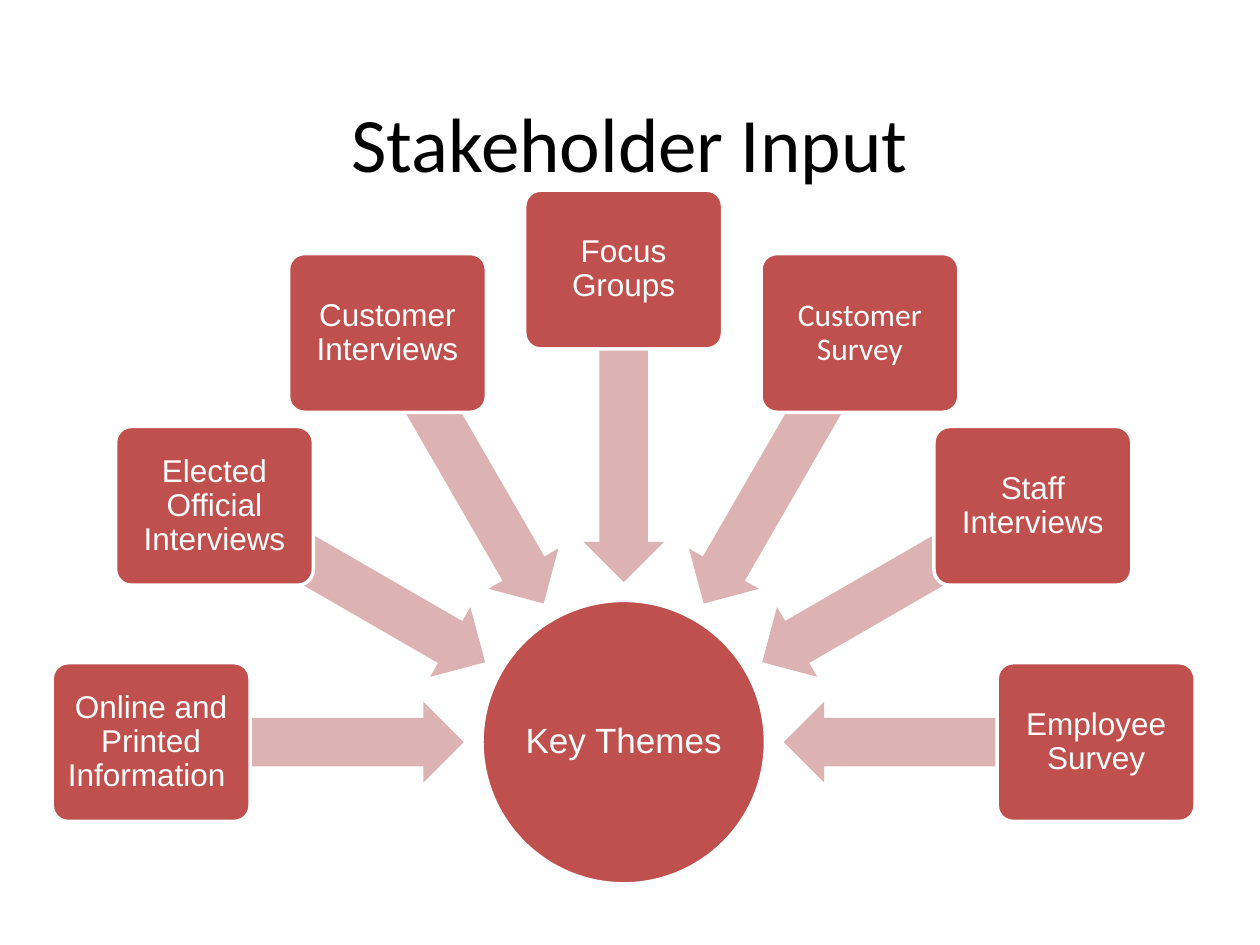
from dataclasses import dataclass
from math import cos, radians, sin

from pptx import Presentation
from pptx.dml.color import RGBColor
from pptx.enum.shapes import MSO_SHAPE
from pptx.enum.text import MSO_ANCHOR, PP_ALIGN
from pptx.util import Inches, Pt

ELLIPSE = MSO_SHAPE.OVAL
ROUNDED = MSO_SHAPE.ROUNDED_RECTANGLE
LEFT_ARROW = MSO_SHAPE.LEFT_ARROW
MIDDLE = MSO_ANCHOR.MIDDLE
CENTER = PP_ALIGN.CENTER


@dataclass(frozen=True)
class Theme:
    ink: RGBColor = RGBColor(0x00, 0x00, 0x00)
    paper: RGBColor = RGBColor(0xFF, 0xFF, 0xFF)
    accent: RGBColor = RGBColor(0xC0, 0x50, 0x4D)
    pale_accent: RGBColor = RGBColor(0xDC, 0xB3, 0xB2)
    heading_font: str = "Calibri"
    body_font: str = "Arial"
    title_size: int = 44
    hub_size: int = 20
    source_size: int = 18
    outline: int = 2


class SlideBuilder:
    def __init__(self, slide, theme):
        self.slide = slide
        self.theme = theme

    def set_text(self, frame, text, size, font, color, line_spacing=1.0, inset=None):
        frame.text = text
        frame_format = {"word_wrap": True, "vertical_anchor": MIDDLE}
        if inset is not None:
            for side in ("left", "top", "right", "bottom"):
                frame_format[f"margin_{side}"] = Inches(inset)
        paragraph = frame.paragraphs[0]
        formats = (
            (frame, frame_format),
            (paragraph, {"alignment": CENTER, "line_spacing": line_spacing}),
            (paragraph.runs[0].font, {"size": Pt(size), "name": font}),
        )
        for target, values in formats:
            for attribute, value in values.items():
                setattr(target, attribute, value)
        paragraph.runs[0].font.color.rgb = color

    def title(self, text, left, top, width, height):
        heading = self.slide.shapes.add_textbox(
            Inches(left), Inches(top), Inches(width), Inches(height))
        self.set_text(heading.text_frame, text, self.theme.title_size,
                      self.theme.heading_font, self.theme.ink)

    def centered_shape(self, kind, center, size, fill):
        (x, y), (width, height) = center, size
        shape = self.slide.shapes.add_shape(
            kind, Inches(x - width / 2), Inches(y - height / 2),
            Inches(width), Inches(height))
        shape.shadow.inherit = False
        shape.fill.solid()
        shape.fill.fore_color.rgb = fill
        return shape

    def node(self, kind, center, size, text, text_size, font, inset):
        node = self.centered_shape(kind, center, size, self.theme.accent)
        node.line.color.rgb = self.theme.paper
        node.line.width = Pt(self.theme.outline)
        self.set_text(node.text_frame, text, text_size, font,
                      self.theme.paper, 0.9, inset)
        return node

    def hub(self, text, center, diameter):
        self.node(ELLIPSE, center, (diameter, diameter), text,
                  self.theme.hub_size, self.theme.body_font, 0.01)

    def source(self, text, center, size, font):
        box = self.node(ROUNDED, center, size, text,
                        self.theme.source_size, font, 0.04)
        box.adjustments[0] = 0.1

    def arrow(self, center, size, angle):
        arrow = self.centered_shape(LEFT_ARROW, center, size, self.theme.pale_accent)
        arrow.line.fill.background()
        arrow.rotation = angle % 360
        arrow.adjustments[0] = 0.6
        arrow.adjustments[1] = 0.5


def on_circle(center, radius, angle):
    return (center[0] + radius * cos(radians(angle)),
            center[1] + radius * sin(radians(angle)))


def main():
    deck = Presentation()
    deck.slide_width, deck.slide_height = Inches(10), Inches(7.5)
    theme = Theme()
    builder = SlideBuilder(deck.slides.add_slide(deck.slide_layouts[6]), theme)

    sources = (
        ("Online and Printed Information ", theme.body_font),
        ("Elected Official Interviews", theme.body_font),
        ("Customer Interviews", theme.body_font),
        ("Focus Groups", theme.body_font),
        ("Customer Survey", theme.heading_font),
        ("Staff Interviews", theme.body_font),
        ("Employee Survey", theme.body_font),
    )
    hub_center = (4.95, 5.89)
    source_radius, arrow_radius = 3.75, 2.51
    angle_step = 180 / (len(sources) - 1)

    builder.title("Stakeholder Input", 0.5, 0.75, 9, 0.75)
    builder.hub("Key Themes", hub_center, 2.25)
    for index, (text, font) in enumerate(sources):
        angle = 180 + index * angle_step
        builder.arrow(on_circle(hub_center, arrow_radius, angle), (2.48, 0.64), angle)
        builder.source(text, on_circle(hub_center, source_radius, angle),
                       (1.57, 1.26), font)

    deck.save("out.pptx")


if __name__ == "__main__":
    main()
